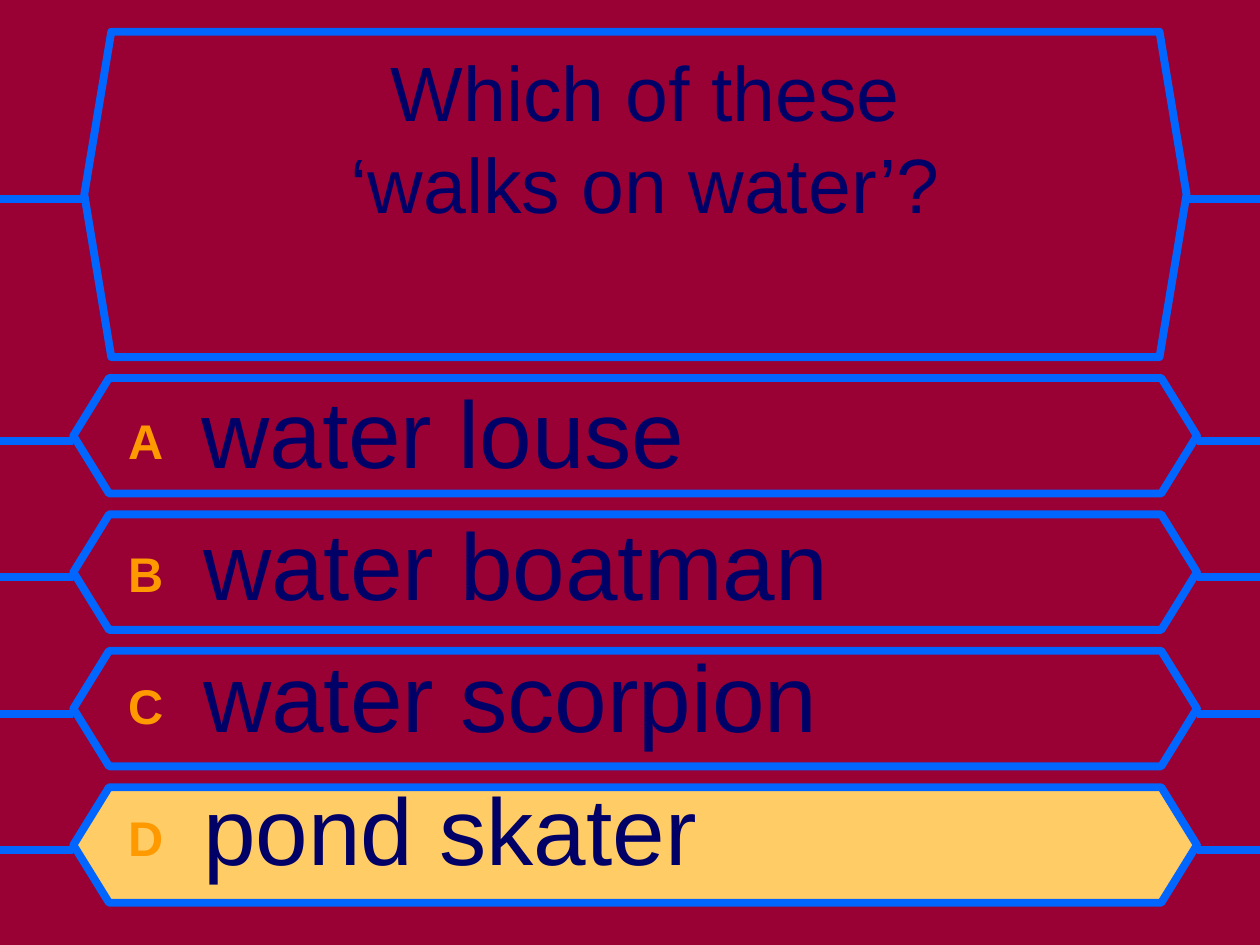
from lxml import etree
from pptx import Presentation
from pptx.dml.color import RGBColor
from pptx.enum.shapes import MSO_CONNECTOR, MSO_SHAPE
from pptx.enum.text import MSO_ANCHOR, MSO_AUTO_SIZE, PP_ALIGN
from pptx.oxml.ns import qn
from pptx.util import Cm, Pt

HEXAGON = MSO_SHAPE.HEXAGON
STRAIGHT = MSO_CONNECTOR.STRAIGHT
NO_AUTOFIT = MSO_AUTO_SIZE.NONE
MIDDLE = MSO_ANCHOR.MIDDLE
CENTER = PP_ALIGN.CENTER

RED, BLUE, NAVY = "990033", "0066FF", "000066"
ORANGE, GOLD = "FF9900", "FFCC66"
SLIDE_W, SLIDE_H = 25.4, 19.05
ROW_TOP, ROW_PITCH = 7.62, 2.75

answers = ["water louse", "water boatman", "water scorpion", "pond skater"]
correct = "pond skater"


def paint(color_format, color):
    """Set a fill or font colour from a hex string."""
    if hasattr(color_format, "solid"):
        color_format.solid()
        color_format = color_format.fore_color
    color_format.rgb = RGBColor.from_string(color)


prs = Presentation()
prs.slide_width, prs.slide_height = Cm(SLIDE_W), Cm(SLIDE_H)
s = prs.slides.add_slide(prs.slide_layouts[1])
paint(s.background.fill, RED)
title, body = s.shapes.title, s.placeholders[1]

# Frames: left, top, width, height, corner, height of side lines, fill
frames = [(1.48, ROW_TOP + i * ROW_PITCH, 22.65, 2.33, 0.309, 1.27,
           GOLD if answer == correct else RED)
          for i, answer in enumerate(answers)]
frames.append((1.7, 0.64, 22.22, 6.56, 0.083, 3.38, RED))

for left, top, width, height, corner, _, fill in frames:
    sp = s.shapes.add_shape(HEXAGON, Cm(left), Cm(top), Cm(width), Cm(height))
    sp.adjustments[0] = corner
    sp.shadow.inherit = False
    paint(sp.fill, fill)
    paint(sp.line.fill, BLUE)
    sp.line.width = Pt(4.5)

# Answers, in front of the frames
s.shapes.element.append(body.element)
body.left, body.top, body.width, body.height = Cm(2.33), Cm(7.41), Cm(21.17), Cm(11.01)
tf = body.text_frame
tf.auto_size = NO_AUTOFIT
for i, answer in enumerate(answers):
    p = tf.paragraphs[0] if i == 0 else tf.add_paragraph()
    p.font.name = "Arial"
    etree.SubElement(p._p.get_or_add_pPr(), qn("a:buNone"))
    p._p.pPr.insert(0, p._p.pPr.find(qn("a:buNone")))
    for text, size, color in (("ABCD"[i] + " ", 48, ORANGE), (" ", 54, RED), (answer, 54, NAVY)):
        r = p.add_run()
        r.text = text
        r.font.size = Pt(size)
        paint(r.font.color, color)
        if color == ORANGE:
            r.font.bold = True
            r.font._element.set("baseline", "10000")

# Lines from the frames to the slide edges
for left, top, width, _, _, drop, _ in frames:
    y = Cm(top + drop)
    for x1, x2 in ((left, 0), (SLIDE_W, left + width)):
        line = s.shapes.add_connector(STRAIGHT, Cm(x1), y, Cm(x2), y)
        paint(line.line.fill, BLUE)
        line.line.width = Pt(4.5)
        etree.SubElement(line.element.spPr, qn("a:effectLst"))

# Question
s.shapes.element.append(title.element)
title.left, title.top, title.width, title.height = Cm(6.56), Cm(1.06), Cm(12.91), Cm(3.39)
tf = title.text_frame
tf.text = "Which of these ‘walks on water’?"
tf.auto_size = NO_AUTOFIT
tf.vertical_anchor = MIDDLE
p = tf.paragraphs[0]
p.alignment = CENTER
p.font.name = "Arial"
p.font.size = Pt(44)
paint(p.font.color, NAVY)

prs.save("out.pptx")
